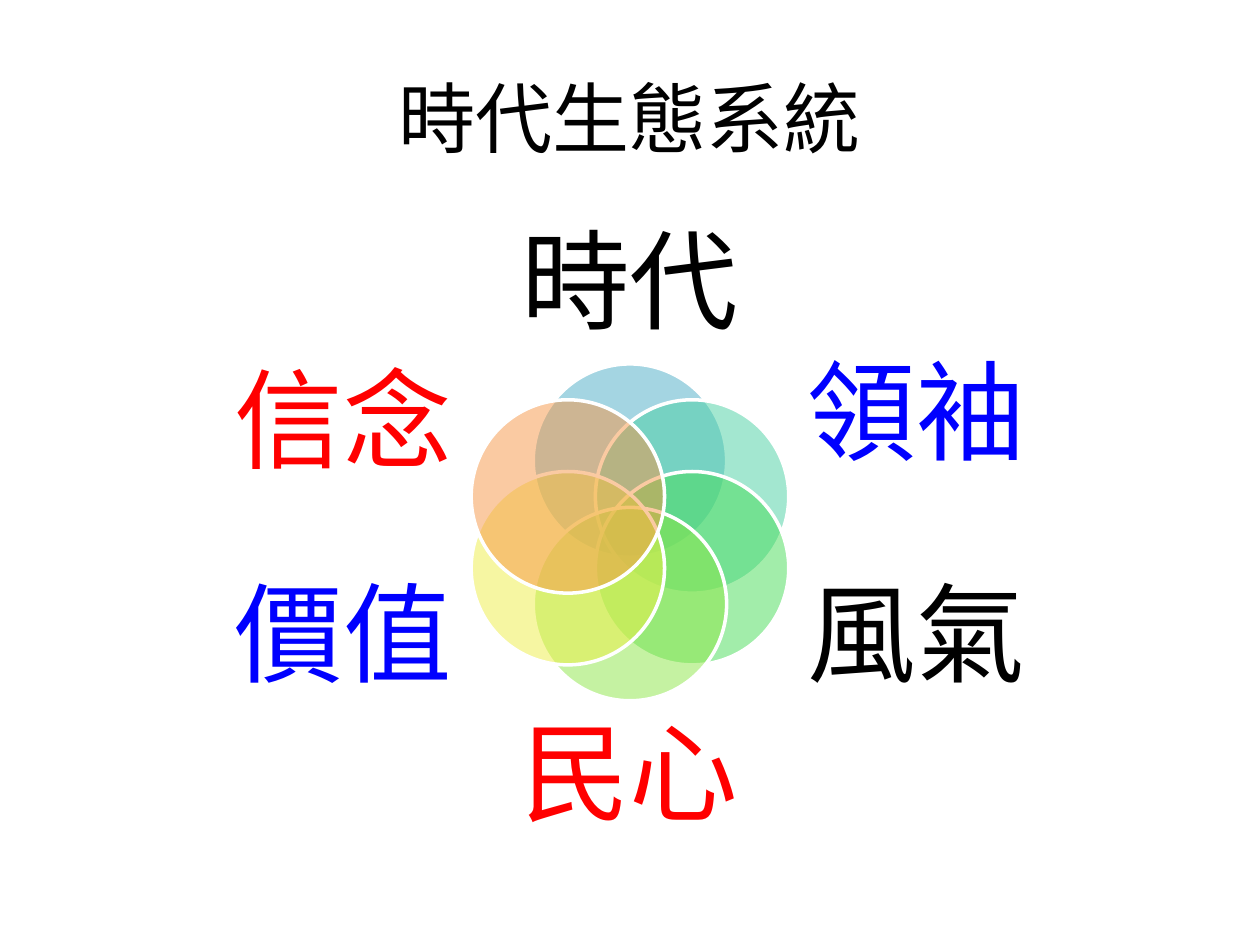
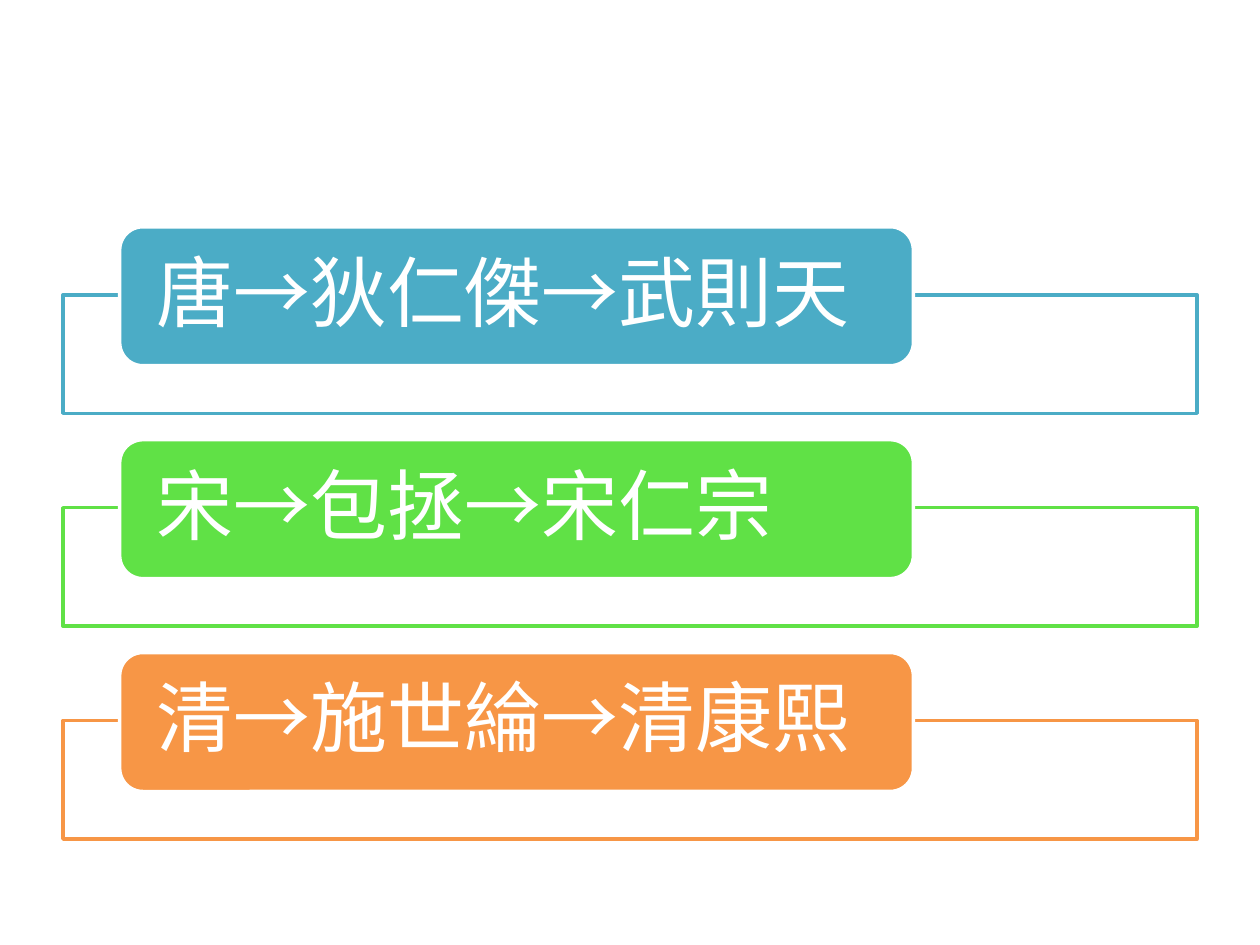
import math

import pptx
import pptx.dml.color
import pptx.enum.shapes
import pptx.enum.text
import pptx.oxml.ns
import pptx.util
from lxml import etree

SHAPE = pptx.enum.shapes.MSO_SHAPE
ALIGN = pptx.enum.text.PP_ALIGN
MIDDLE = pptx.enum.text.MSO_ANCHOR.MIDDLE
qn = pptx.oxml.ns.qn

FONT = "Noto Sans CJK SC"
BLACK, WHITE, RED, BLUE = "000000", "FFFFFF", "FF0000", "0000FF"
TEAL, ORANGE = "4BACC6", "F79646"
LINE_WIDTH = 2
TITLE_SIZE, LABEL_SIZE = 44, 62

# Boxes in inches: left, top, width, height
TITLE_BOX = (0.5, 0.3, 9, 1.25)
RING_BOX = (1.82, 1.75, 6.36, 4.95)
BARS_BOX = (0.5, 1.8, 9, 4.86)

# Clockwise from the top: text, text colour, circle colour,
# then label centre x, y and height as percent of the ring box
PETALS = [
    ("時代", BLACK, TEAL, 50, 10.5, 21),
    ("領袖", BLUE, "49D1A3", 85.75, 31.5, 23),
    ("風氣", BLACK, "47DC57", 85.75, 67.2, 25.7),
    ("民心", RED, "8DE646", 50, 89.5, 21),
    ("價值", BLUE, "EEEF46", 14.25, 67.2, 25.7),
    ("信念", RED, ORANGE, 14.25, 32.8, 25.7),
]
DYNASTIES = [
    ("唐→狄仁傑→武則天", TEAL),
    ("宋→包拯→宋仁宗", "60E146"),
    ("清→施世綸→清康熙", ORANGE),
]


def rgb(color):
    return pptx.dml.color.RGBColor.from_string(color)


def inches(box):
    return [pptx.util.Inches(v) for v in box]


def write(tf, text, size, color, align, side_inset=0.0):
    """Put one middle-anchored line of text in a frame."""
    tf.word_wrap = True
    tf.vertical_anchor = MIDDLE
    tf.margin_top = tf.margin_bottom = 0
    tf.margin_left = tf.margin_right = pptx.util.Inches(side_inset)
    p = tf.paragraphs[0]
    r = p.add_run()
    r.text = text
    p.alignment = align
    p.line_spacing = 0.9
    r.font.size = pptx.util.Pt(size)
    r.font.name = FONT
    r.font.color.rgb = rgb(color)
    # East Asian typeface follows the Latin one
    latin = r.font._element.find(qn("a:latin"))
    ea = etree.Element(qn("a:ea"), typeface=FONT)
    latin.addnext(ea)
    return p


def add_shape(s, kind, box, fill, line, opacity=100):
    sp = s.shapes.add_shape(kind, *inches(box))
    sp.shadow.inherit = False
    sp.fill.solid()
    sp.fill.fore_color.rgb = rgb(fill)
    sp.line.color.rgb = rgb(line)
    sp.line.width = pptx.util.Pt(LINE_WIDTH)
    if opacity < 100:
        color = sp._element.spPr.find(qn("a:solidFill"))[0]
        etree.SubElement(color, qn("a:alpha"), val=str(opacity * 1000))
    return sp


def add_title(s, text, box):
    sp = s.shapes.title
    sp.left, sp.top, sp.width, sp.height = inches(box)
    p = write(sp.text_frame, text, TITLE_SIZE, BLACK, ALIGN.CENTER)
    p.line_spacing = 1.0


def add_ring(s, box, petals):
    """Overlapping circles around the box centre, each with an outer label."""
    left, top, width, height = box
    cx, cy = left + width / 2, top + height / 2
    diameter, orbit = 0.31 * height, 0.115 * height
    label_width = 0.3 * width
    for i, (text, color, fill, x, y, h) in enumerate(petals):
        angle = 2 * math.pi * i / len(petals)
        circle = (cx + orbit * math.sin(angle) - diameter / 2,
                  cy - orbit * math.cos(angle) - diameter / 2,
                  diameter, diameter)
        add_shape(s, SHAPE.OVAL, circle, fill, WHITE, opacity=50)
        label = (left + width * x / 100 - label_width / 2,
                 top + height * (y - h / 2) / 100,
                 label_width, height * h / 100)
        tb = s.shapes.add_textbox(*inches(label))
        write(tb.text_frame, text, LABEL_SIZE, color, ALIGN.CENTER)


def add_bars(s, box, rows):
    """Equal rows: an outlined frame with a filled bar over its top edge."""
    left, top, width, height = box
    gap = 0.043 * height
    row_height = (height - gap * (len(rows) - 1)) / len(rows)
    for i, (text, color) in enumerate(rows):
        y = top + i * (row_height + gap)
        frame = (left, y + 0.365 * row_height, width, 0.635 * row_height)
        add_shape(s, SHAPE.RECTANGLE, frame, WHITE, color, opacity=90)
        bar = (left + 0.05 * width, y, 0.7 * width, 0.745 * row_height)
        sp = add_shape(s, SHAPE.ROUNDED_RECTANGLE, bar, color, WHITE)
        write(sp.text_frame, text, TITLE_SIZE, WHITE, ALIGN.LEFT, 0.24)


def main():
    prs = pptx.Presentation()
    prs.slide_width, prs.slide_height = inches((10, 7.5))
    title_only, blank = prs.slide_layouts[5], prs.slide_layouts[6]

    # Ecosystem of an era
    s = prs.slides.add_slide(title_only)
    add_title(s, "時代生態系統", TITLE_BOX)
    add_ring(s, RING_BOX, PETALS)

    # Dynasties, officials and rulers
    s = prs.slides.add_slide(blank)
    add_bars(s, BARS_BOX, DYNASTIES)

    prs.save("out.pptx")


if __name__ == "__main__":
    main()
